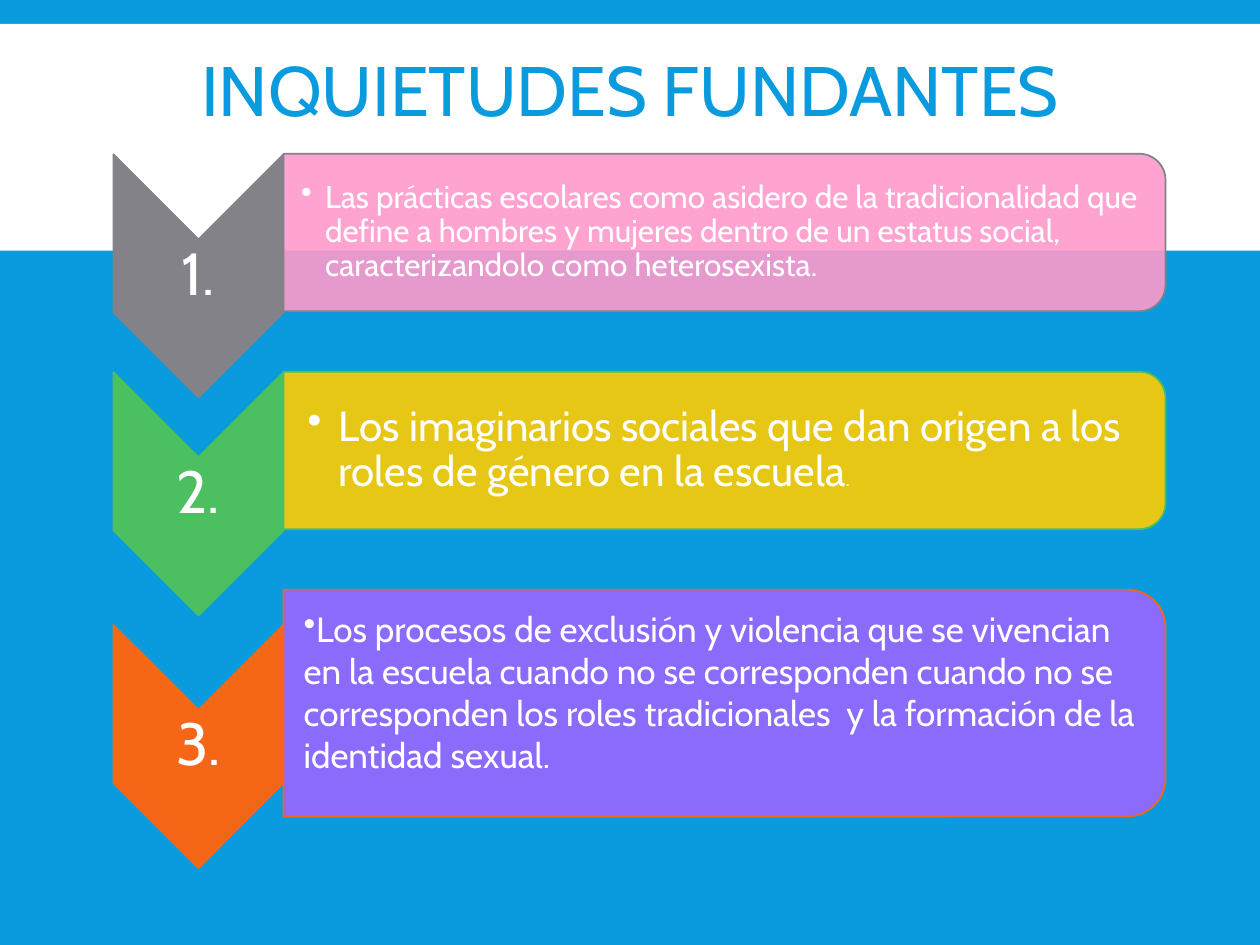
from dataclasses import dataclass

from lxml.etree import SubElement
from pptx import Presentation
from pptx.dml.color import RGBColor
from pptx.enum.shapes import MSO_SHAPE as Shape
from pptx.enum.text import MSO_ANCHOR as Anchor, PP_ALIGN as Align
from pptx.oxml.ns import qn
from pptx.util import Inches, Pt


@dataclass(frozen=True)
class Theme:
    font: str = "Cabin"
    blue: str = "099BDD"
    white: str = "FFFFFF"
    title_size: int = 40
    number_size: int = 34


@dataclass(frozen=True)
class Concern:
    runs: tuple  # (text, size) pairs
    accent: str
    fill: str
    height: float = 1.25
    margin: float = 0.06
    left_inset: float = 0.14
    bottom_inset: float = 0.01
    hanging: float = 0
    spacing: float = 0.9


THEME = Theme()
CONCERNS = (
    Concern((("Las prácticas escolares como asidero de la tradicionalidad que define a "
              "hombres y mujeres dentro de un estatus social, caracterizandolo como "
              "heterosexista.", 18),), "828288", "FF99CC", hanging=0.19),
    Concern((("Los imaginarios sociales que dan origen a los roles de género en la "
              "escuela", 24), (".", 12)), "4CBF61", "FFCC00",
            left_inset=0.19, hanging=0.25),
    Concern((("Los procesos de exclusión y violencia que se vivencian en la escuela "
              "cuando no se corresponden cuando no se corresponden los roles "
              "tradicionales  y la formación de la identidad sexual.", 20),),
            "F56617", "9966FF", height=1.8, margin=0.09, left_inset=0.16,
            bottom_inset=0.2, spacing=1),
)


def add_run(paragraph, text, size, color):
    run = paragraph.add_run()
    run.text = text
    run.font.name = THEME.font
    run.font.size = Pt(size)
    run.font.color.rgb = RGBColor.from_string(color)


def add_turned_shape(shapes, kind, left, top, width, height, fill, line):
    """Fill the given box with a preset shape turned by 90 degrees."""
    shift = (width - height) / 2
    shape = shapes.add_shape(kind, Inches(left + shift), Inches(top - shift),
                             Inches(height), Inches(width))
    shape.rotation = 90
    shape.shadow.inherit = False
    shape.fill.solid()
    shape.fill.fore_color.rgb = RGBColor.from_string(fill)
    shape.line.color.rgb = RGBColor.from_string(line)
    shape.line.width = Pt(1)
    return shape


def set_opacity(shape, percent):
    color = shape.element.spPr.find(qn("a:solidFill"))[0]
    SubElement(color, qn("a:alpha"), val=str(percent * 1000))


def add_text_box(shapes, left, top, width, height, insets):
    """Add a wrapped, centred text box; insets run left, top, right, bottom."""
    box = shapes.add_textbox(Inches(left), Inches(top), Inches(width), Inches(height))
    frame = box.text_frame
    frame.word_wrap = True
    frame.vertical_anchor = Anchor.MIDDLE
    (frame.margin_left, frame.margin_top,
     frame.margin_right, frame.margin_bottom) = map(Inches, insets)
    return frame.paragraphs[0]


def add_bullet(paragraph, hanging):
    properties = paragraph._p.get_or_add_pPr()
    properties.set("marL", str(Inches(hanging)))
    properties.set("indent", str(-Inches(hanging)))
    SubElement(properties, qn("a:buChar"), char="•")


def add_number_chevron(shapes, number, color, left, top, width, height):
    add_turned_shape(shapes, Shape.CHEVRON, left, top, width, height, color, color)
    paragraph = add_text_box(shapes, left, top + width / 2, width,
                             height - width, (0.02,) * 4)
    paragraph.alignment = Align.CENTER
    paragraph.line_spacing = 0.9
    add_run(paragraph, f"{number}.", THEME.number_size, THEME.white)


def add_concern_panel(shapes, concern, left, top, width, height):
    panel = add_turned_shape(shapes, Shape.ROUND_2_SAME_RECTANGLE, left, top,
                             width, height, concern.fill, concern.accent)
    set_opacity(panel, 90)
    margin = concern.margin
    paragraph = add_text_box(shapes, left, top + margin, width - margin,
                             height - 2 * margin,
                             (concern.left_inset, 0.01, 0.01, concern.bottom_inset))
    paragraph.line_spacing = concern.spacing
    add_bullet(paragraph, concern.hanging)
    for text, size in concern.runs:
        add_run(paragraph, text, size, THEME.white)


def add_concern_list(slide, left, top, width, pitch):
    chevron_width, chevron_height, chevron_rise = 1.35, 1.93, 0.62
    for index, concern in enumerate(CONCERNS):
        shapes = slide.shapes.add_group_shape().shapes
        row_top = top + index * pitch
        middle = row_top + concern.height / 2
        add_number_chevron(shapes, index + 1, concern.accent, left,
                           middle - chevron_rise, chevron_width, chevron_height)
        add_concern_panel(shapes, concern, left + chevron_width, row_top,
                          width - chevron_width, concern.height)


def add_title(slide, left, top, width, height):
    title = slide.shapes.title
    title.left, title.top = Inches(left), Inches(top)
    title.width, title.height = Inches(width), Inches(height)
    frame = title.text_frame
    frame.vertical_anchor = Anchor.MIDDLE
    paragraph = frame.paragraphs[0]
    paragraph.alignment = Align.CENTER
    paragraph.line_spacing = 0.85
    add_run(paragraph, "INQUIETUDES FUNDANTES", THEME.title_size, THEME.blue)


def add_title_band(slide, left, top, width, height):
    """Place the white band behind the title."""
    band = slide.shapes.add_shape(Shape.RECTANGLE, Inches(left), Inches(top),
                                  Inches(width), Inches(height))
    band.shadow.inherit = False
    band.fill.solid()
    band.fill.fore_color.rgb = RGBColor.from_string(THEME.white)
    band.line.fill.background()
    slide.shapes.title.element.addprevious(band.element)


def main():
    presentation = Presentation()
    presentation.slide_width, presentation.slide_height = Inches(10), Inches(7.5)
    slide = presentation.slides.add_slide(presentation.slide_layouts[5])
    slide.background.fill.solid()
    slide.background.fill.fore_color.rgb = RGBColor.from_string(THEME.blue)
    add_title_band(slide, 0, 0.19, 10, 1.8)
    add_title(slide, 0.75, 0.31, 8.5, 0.89)
    add_concern_list(slide, 0.9, 1.22, 8.35, 1.73)
    presentation.save("out.pptx")


if __name__ == "__main__":
    main()
